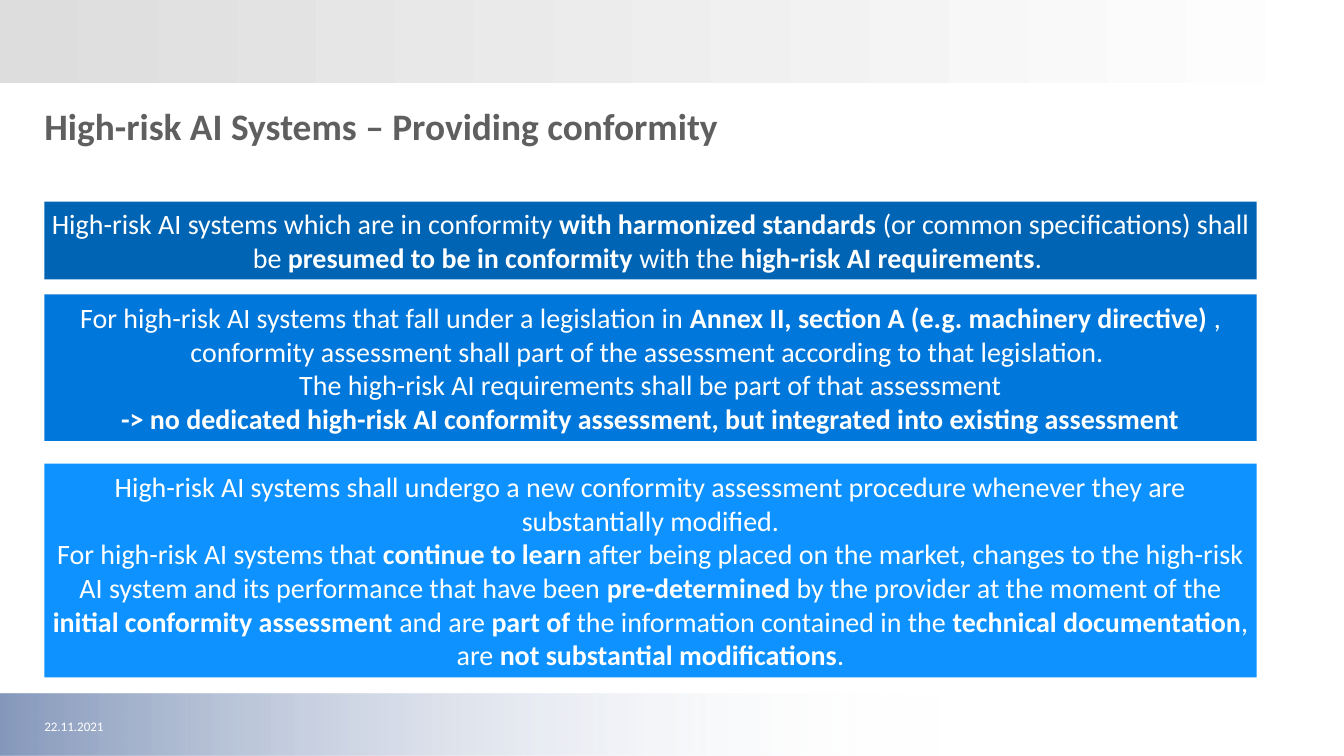
from dataclasses import dataclass

from lxml.etree import SubElement
from pptx import Presentation
from pptx.dml.color import RGBColor
from pptx.enum.shapes import MSO_SHAPE as Shape
from pptx.enum.text import MSO_ANCHOR as Anchor, MSO_AUTO_SIZE as AutoSize, PP_ALIGN as Align
from pptx.oxml.ns import qn
from pptx.util import Inches, Pt

WIDTH = 10
HEIGHT = WIDTH * 9 / 16
MARGIN = 0.33
CONTENT_WIDTH = 9.02
FOOTER_HEIGHT = 0.46
FONT = "Calibri"
WHITE = "FFFFFF"


@dataclass(frozen=True)
class Band:
    top: float
    height: float
    start: str
    end_position: float = 1
    opacities: tuple[int, ...] = ()


@dataclass(frozen=True)
class Statement:
    top: float
    height: float
    fill: str
    paragraphs: tuple[str, ...]


BANDS = (
    Band(HEIGHT - FOOTER_HEIGHT, FOOTER_HEIGHT, "3B5A93", 0.7, (62, 0)),
    Band(0, 0.62, "DDDDDD"),
)

STATEMENTS = (
    Statement(1.5, 0.58, "0064B4", (
        "High-risk AI systems which are in conformity **with harmonized standards **"
        "(or common specifications) shall be **presumed to be in conformity **"
        "with the **high-risk AI requirements**. ",
    )),
    Statement(2.19, 1.09, "0077DA", (
        "For high-risk AI systems that fall under a legislation in "
        "**Annex II, section A (e.g. machinery directive) **, conformity assessment "
        "shall part of the assessment according to that legislation. \n"
        "The high-risk AI requirements shall be part of that assessment",
        "**-> no dedicated high-risk AI conformity assessment, "
        "but integrated into existing assessment**",
    )),
    Statement(3.45, 1.59, "0D92FF", (
        "High-risk AI systems shall undergo a new conformity assessment procedure "
        "whenever they are substantially modified.",
        "For high-risk AI systems that **continue to learn **after being placed on the "
        "market, changes to the high-risk AI system and its performance that have been "
        "**pre-determined** by the provider at the moment of the "
        "**initial conformity assessment **and are **part of **the information contained "
        "in the **technical documentation**, are **not substantial modifications**.",
    )),
)


def color(value: str) -> RGBColor:
    return RGBColor.from_string(value)


def write(shape, *paragraphs: str, size: float, fill: str = WHITE, bold: bool = False,
          align=Align.LEFT, anchor=Anchor.MIDDLE, inset: float = 0,
          auto_size=AutoSize.NONE) -> None:
    frame = shape.text_frame
    frame.word_wrap = True
    frame.auto_size = auto_size
    frame.vertical_anchor = anchor
    frame.margin_left = frame.margin_right = Inches(inset)
    frame.margin_top = frame.margin_bottom = Inches(inset)
    for index, text in enumerate(paragraphs):
        para = frame.add_paragraph() if index else frame.paragraphs[0]
        para.alignment = align
        for part, words in enumerate(text.split("**")):
            for row, line in enumerate(words.split("\n")):
                if row:
                    para.add_line_break()
                if line:
                    span = para.add_run()
                    span.text = line
                    span.font.name = FONT
                    span.font.size = Pt(size)
                    span.font.bold = bold or part % 2 == 1
                    span.font.color.rgb = color(fill)


def add_rectangle(page, left: float, top: float, width: float, height: float):
    box = page.shapes.add_shape(
        Shape.RECTANGLE, Inches(left), Inches(top), Inches(width), Inches(height))
    box.shadow.inherit = False
    box.line.fill.background()
    return box


def draw_band(page, band: Band) -> None:
    box = add_rectangle(page, 0, band.top, WIDTH, band.height)
    box.fill.gradient()
    box.fill.gradient_angle = 0
    stops = box.fill.gradient_stops
    for stop, shade, position in zip(stops, (band.start, WHITE), (0, band.end_position)):
        stop.color.rgb = color(shade)
        stop.position = position
    shades = box.fill._xPr.iter(qn("a:srgbClr"))
    for shade, opacity in zip(shades, band.opacities):
        SubElement(shade, qn("a:alpha"), val=str(opacity * 1000))


def draw_statement(page, statement: Statement) -> None:
    box = add_rectangle(page, MARGIN, statement.top, CONTENT_WIDTH, statement.height)
    box.fill.solid()
    box.fill.fore_color.rgb = color(statement.fill)
    write(box, *statement.paragraphs, size=15, align=Align.CENTER, inset=0.04,
          auto_size=AutoSize.SHAPE_TO_FIT_TEXT)


def main() -> None:
    deck = Presentation()
    deck.slide_width, deck.slide_height = Inches(WIDTH), Inches(HEIGHT)
    page = deck.slides.add_slide(deck.slide_layouts[5])

    for band in BANDS:
        draw_band(page, band)

    date = page.shapes.add_textbox(Inches(MARGIN), Inches(5.33), Inches(0.98), Inches(0.15))
    write(date, "22.11.2021", size=7)

    title = page.shapes.title
    title.left, title.top = Inches(MARGIN), Inches(0.77)
    title.width, title.height = Inches(9.28), Inches(0.9)
    write(title, "High-risk AI Systems – Providing conformity", size=20, fill="5F5F5F",
          bold=True, anchor=Anchor.TOP)

    for statement in STATEMENTS:
        draw_statement(page, statement)

    deck.save("out.pptx")


if __name__ == "__main__":
    main()
